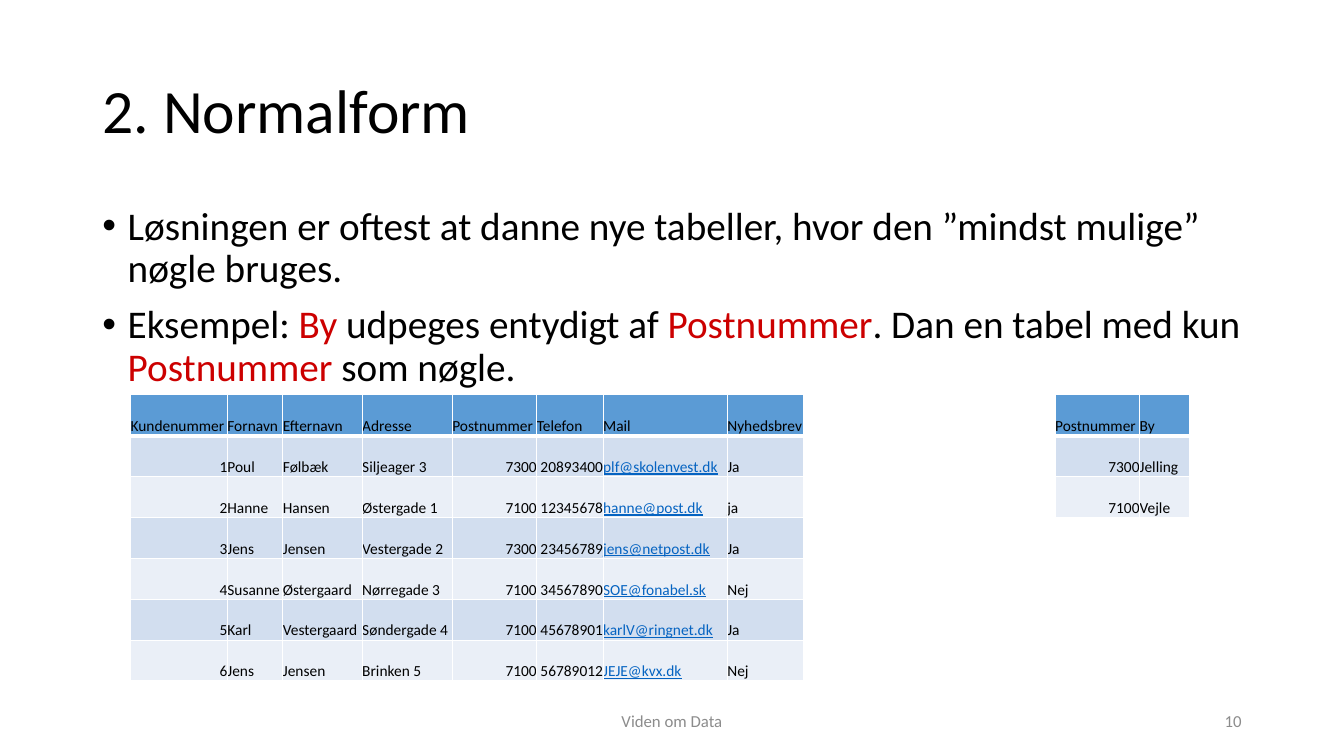
from lxml.etree import SubElement as Sub
from pptx import Presentation
from pptx.dml.color import RGBColor as Rgb
from pptx.enum.text import MSO_ANCHOR as Anchor, PP_ALIGN as Align
from pptx.oxml import parse_xml
from pptx.oxml.ns import nsdecls, qn
from pptx.util import Cm, Pt

HUES = {
    "ink": "000000", "red": "CC0000", "grey": "8C8C8C", "link": "0563C1",
    "head": "5B9BD5", "odd": "D2DEEF", "even": "EAEFF7", "rule": "FFFFFF",
}
ROW = 1.03

POINTS = [
    [("Løsningen er oftest at danne nye tabeller, hvor den ”mindst mulige” nøgle bruges.", "ink")],
    [("Eksempel: ", "ink"), ("By", "red"), (" udpeges entydigt af ", "ink"),
     ("Postnummer", "red"), (". Dan en tabel med kun ", "ink"),
     ("Postnummer", "red"), (" som nøgle.", "ink")],
]
CLIENTS = [
    ("Kundenummer", "Fornavn", "Efternavn", "Adresse", "Postnummer", "Telefon", "Mail", "Nyhedsbrev"),
    ("1", "Poul", "Følbæk", "Siljeager 3", "7300", "20893400", "plf@skolenvest.dk", "Ja"),
    ("2", "Hanne", "Hansen", "Østergade 1", "7100", "12345678", "hanne@post.dk", "ja"),
    ("3", "Jens", "Jensen", "Vestergade 2", "7300", "23456789", "jens@netpost.dk", "Ja"),
    ("4", "Susanne", "Østergaard", "Nørregade 3", "7100", "34567890", "SOE@fonabel.sk", "Nej"),
    ("5", "Karl", "Vestergaard", "Søndergade 4", "7100", "45678901", "karlV@ringnet.dk", "Ja"),
    ("6", "Jens", "Jensen", "Brinken 5", "7100", "56789012", "JEJE@kvx.dk", "Nej"),
]
TOWNS = [("Postnummer", "By"), ("7300", "Jelling"), ("7100", "Vejle")]


def write(par, text, size=11, hue="ink", align=Align.LEFT, under=False):
    par.alignment = align
    run = par.add_run()
    run.text = text
    font = run.font
    font.name, font.size, font.bold = "Calibri", Pt(size), False
    font.color.rgb = Rgb.from_string(HUES[hue])
    if under:
        font.underline = True


class Deck:
    def __init__(self):
        self.file = Presentation()
        self.file.slide_width, self.file.slide_height = Cm(33.87), Cm(19.05)
        self.slide = self.file.slides.add_slide(self.file.slide_layouts[5])

    def title(self, text, *box):
        head = self.slide.shapes.title
        head.left, head.top, head.width, head.height = map(Cm, box)
        head.text_frame.vertical_anchor = Anchor.MIDDLE
        par = head.text_frame.paragraphs[0]
        par.line_spacing = 0.9
        write(par, text, size=44)

    def frame(self, box, anchor):
        frame = self.slide.shapes.add_textbox(*map(Cm, box)).text_frame
        frame.word_wrap = True
        frame.vertical_anchor = anchor
        return frame

    def note(self, text, align, *box):
        frame = self.frame(box, Anchor.MIDDLE)
        write(frame.paragraphs[0], text, size=12, hue="grey", align=align)

    def points(self, items, *box):
        frame = self.frame(box, Anchor.TOP)
        for i, item in enumerate(items):
            par = frame.add_paragraph() if i else frame.paragraphs[0]
            par.line_spacing, par.space_before = 0.9, Pt(10)
            for text, hue in item:
                write(par, text, size=28, hue=hue)
            props = par._p.get_or_add_pPr()
            props.set("marL", str(Cm(0.64)))
            props.set("indent", str(-Cm(0.64)))
            Sub(props, qn("a:buFont")).set("typeface", "Arial")
            Sub(props, qn("a:buChar")).set("char", "•")

    def edge(self, cell, base):
        props = cell._tc.get_or_add_tcPr()
        for i, side in enumerate("LRTB"):
            wide = Pt(base if side == "B" else 1)
            props.insert(i, parse_xml(
                f'<a:ln{side} {nsdecls("a")} w="{wide}"><a:solidFill>'
                f'<a:srgbClr val="{HUES["rule"]}"/></a:solidFill></a:ln{side}>'))

    def cell(self, cell, text, row):
        cell.margin_left = cell.margin_right = cell.margin_top = cell.margin_bottom = 0
        cell.vertical_anchor = Anchor.BOTTOM
        cell.fill.solid()
        fill = "head" if row == 0 else "odd" if row % 2 else "even"
        cell.fill.fore_color.rgb = Rgb.from_string(HUES[fill])
        mail = "@" in text
        write(cell.text_frame.paragraphs[0], text, hue="link" if mail else "ink",
              align=Align.RIGHT if text.isdigit() else Align.LEFT, under=mail)
        self.edge(cell, 1 if row else 3)

    def table(self, rows, wides, left, top):
        grid = self.slide.shapes.add_table(
            len(rows), len(wides), Cm(left), Cm(top),
            Cm(sum(wides)), Cm(ROW * len(rows))).table
        for col, wide in zip(grid.columns, wides):
            col.width = Cm(wide)
        for r, row in enumerate(rows):
            grid.rows[r].height = Cm(ROW)
            for c, text in enumerate(row):
                self.cell(grid.cell(r, c), text, r)


def main():
    deck = Deck()
    deck.title("2. Normalform", 2.33, 1.01, 29.21, 3.68)
    deck.points(POINTS, 2.33, 5.07, 29.21, 12.09)
    deck.note("Viden om Data", Align.CENTER, 11.22, 17.65, 11.43, 1.01)
    deck.note("10", Align.RIGHT, 23.92, 17.65, 7.62, 1.01)
    deck.table(CLIENTS, [2.44, 1.4, 2, 2.27, 2.13, 1.67, 3.13, 1.93], 3.29, 9.95)
    deck.table(TOWNS, [2.13, 1.25], 26.59, 9.95)
    deck.file.save("out.pptx")


if __name__ == "__main__":
    main()
